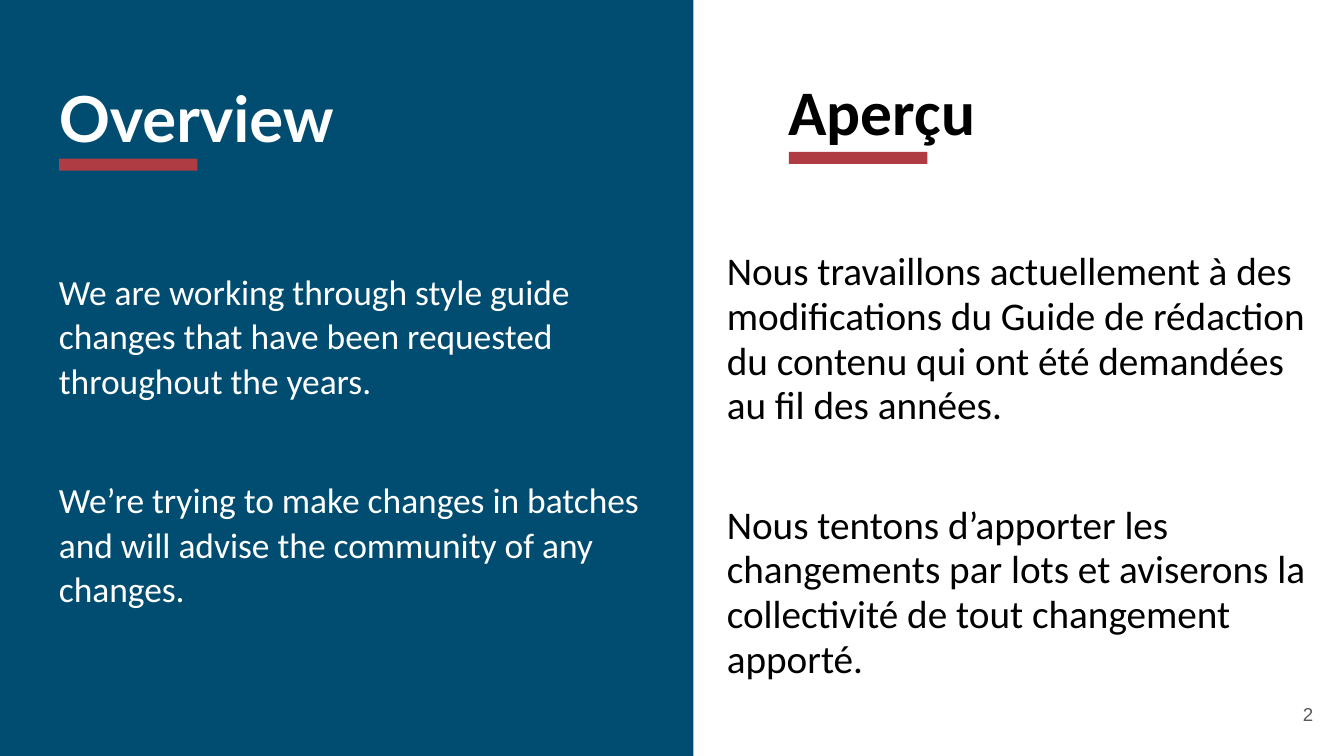
from dataclasses import dataclass

from pptx import Presentation
from pptx.dml.color import RGBColor
from pptx.enum.shapes import MSO_SHAPE as Shape
from pptx.enum.text import MSO_ANCHOR as Anchor, PP_ALIGN as Align
from pptx.util import Inches, Pt


@dataclass(frozen=True)
class Theme:
    """Colours, fonts and type sizes of the slide."""
    navy: str = "004D71"
    red: str = "AF3C43"
    white: str = "FFFFFF"
    black: str = "000000"
    grey: str = "595959"
    english_heading: str = "Lato"
    reading: str = "Calibri"
    numeral: str = "Arial"
    heading_size: int = 34
    english_size: int = 19
    french_size: int = 21
    number_size: int = 10
    paragraph_gap: int = 40


class BilingualSlide:
    """Draws on a 16:9 slide measured in square cells, 100 columns wide."""

    def __init__(self, deck, theme):
        """Add a blank slide to the deck."""
        self.theme = theme
        self.cell = deck.slide_width / 100
        self.slide = deck.slides.add_slide(deck.slide_layouts[6])

    def place(self, *cells):
        """Turn columns and rows into lengths."""
        return [round(count * self.cell) for count in cells]

    def block(self, column, row, columns, rows, colour):
        """Draw a plain filled rectangle."""
        block = self.slide.shapes.add_shape(
            Shape.RECTANGLE, *self.place(column, row, columns, rows))
        block.shadow.inherit = False
        block.fill.solid()
        block.fill.fore_color.rgb = RGBColor.from_string(colour)
        block.line.fill.background()

    def text(self, column, row, columns, rows, paragraphs, font, size, colour,
             bold=False, spacing=1.0, align=Align.LEFT, anchor=Anchor.TOP):
        """Write paragraphs in one shared style."""
        frame = self.slide.shapes.add_textbox(
            *self.place(column, row, columns, rows)).text_frame
        frame.word_wrap = True
        frame.vertical_anchor = anchor
        frame.margin_left = frame.margin_right = Inches(0.1)
        frame.margin_top = frame.margin_bottom = Inches(0.1)
        for index, wording in enumerate(paragraphs):
            paragraph = frame.add_paragraph() if index else frame.paragraphs[0]
            paragraph.alignment = align
            paragraph.line_spacing = spacing
            paragraph.space_before = Pt(self.theme.paragraph_gap if index else 0)
            run = paragraph.add_run()
            run.text = wording
            run.font.name = font
            run.font.size = Pt(size)
            run.font.bold = bold
            run.font.color.rgb = RGBColor.from_string(colour)

    def heading(self, column, row, wording, font, colour):
        """Write a heading with its red underline."""
        self.text(column, row, 33.6, 15.7, [wording], font,
                  self.theme.heading_size, colour, bold=True)
        self.block(column + 1, row + 6.9, 10.3, 0.9, self.theme.red)

    def body(self, column, row, paragraphs, size, colour, spacing):
        """Write the reading text of one language."""
        self.text(column, row, 46.6, 35.8, paragraphs, self.theme.reading,
                  size, colour, spacing=spacing)

    def number(self, wording):
        """Write the slide number in the bottom corner."""
        self.text(92.7, 51, 6, 4.3, [wording], self.theme.numeral,
                  self.theme.number_size, self.theme.grey,
                  align=Align.RIGHT, anchor=Anchor.MIDDLE)


def main():
    """Build and save the overview slide."""
    deck = Presentation()
    deck.slide_width = Inches(10)
    deck.slide_height = deck.slide_width * 9 // 16
    theme = Theme()
    overview = BilingualSlide(deck, theme)

    overview.block(-0.5, -0.1, 52.1, 56.4, theme.navy)
    overview.heading(3.4, 4.9, "Overview", theme.english_heading, theme.white)
    overview.body(3.4, 18.9, [
        "We are working through style guide changes that have been requested "
        "throughout the years.",
        "We’re trying to make changes in batches and will advise the "
        "community of any changes.",
    ], theme.english_size, theme.white, 1.05)

    overview.heading(57.7, 4.4, "Aperçu", theme.reading, theme.black)
    overview.body(53.1, 17.6, [
        "Nous travaillons actuellement à des modifications du Guide de "
        "rédaction du contenu qui ont été demandées au fil des années.",
        "Nous tentons d’apporter les changements par lots et aviserons la "
        "collectivité de tout changement apporté.",
    ], theme.french_size, theme.black, 0.95)
    overview.number("2")

    deck.save("out.pptx")


if __name__ == "__main__":
    main()
